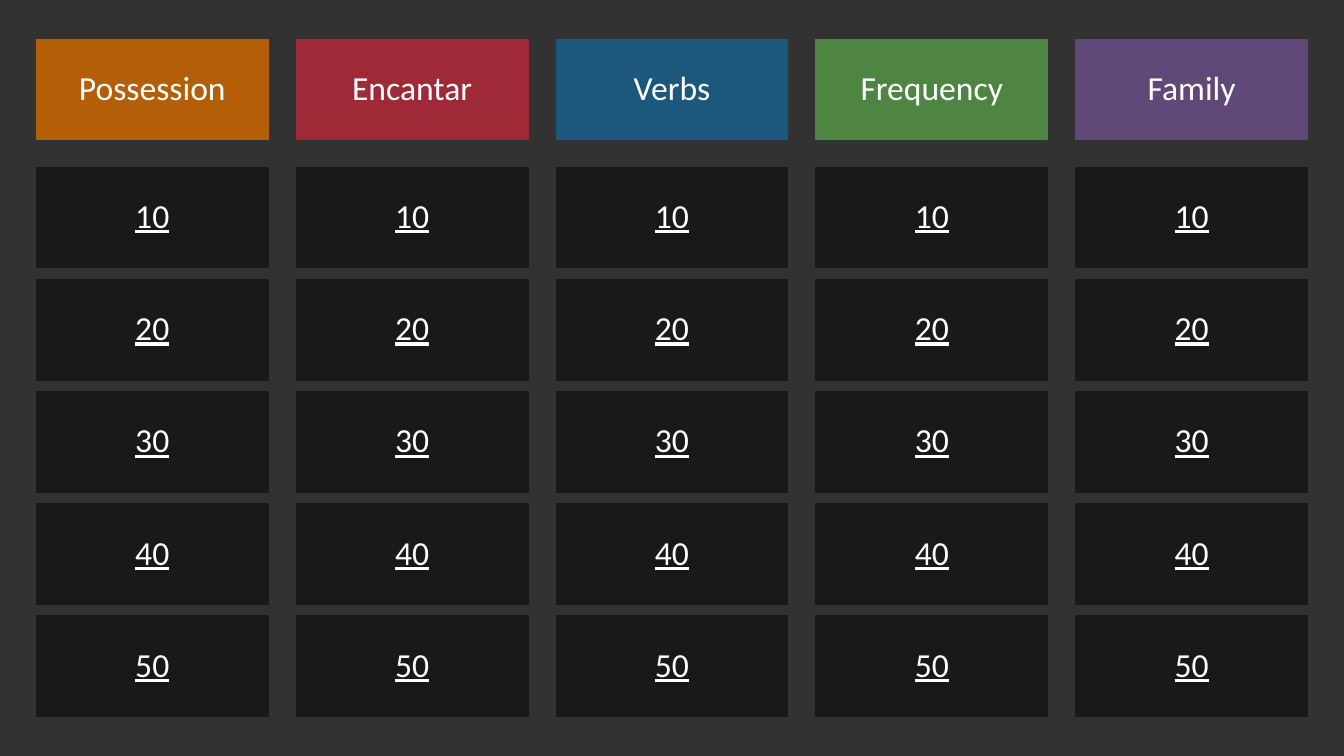
import pptx
import pptx.util
import pptx.dml.color
import pptx.enum.shapes
import pptx.enum.text

Pt = pptx.util.Pt
CATEGORIES = [
    ("Possession", "B45F07"),
    ("Encantar", "9F2936"),
    ("Verbs", "1B587C"),
    ("Frequency", "4E8542"),
    ("Family", "604878"),
]
VALUES = [10, 20, 30, 40, 50]
TILE_W, TILE_H = 165.6, 72


def paint(fmt, color):
    fmt.solid()
    fmt.fore_color.rgb = pptx.dml.color.RGBColor.from_string(color)


def add_tile(s, x, y, text, color, underline=False):
    sp = s.shapes.add_shape(
        pptx.enum.shapes.MSO_SHAPE.RECTANGLE, Pt(x), Pt(y), Pt(TILE_W), Pt(TILE_H))
    sp.shadow.inherit = False
    paint(sp.fill, color)
    paint(sp.line.fill, color)
    sp.line.width = Pt(0.75)
    tf = sp.text_frame
    tf.text = text
    tf.word_wrap = True
    tf.vertical_anchor = pptx.enum.text.MSO_ANCHOR.MIDDLE
    p = tf.paragraphs[0]
    p.alignment = pptx.enum.text.PP_ALIGN.CENTER
    p.line_spacing = 0.9
    r = p.runs[0]
    r.font.name = "Calibri"
    r.font.size = Pt(24)
    r.font.underline = underline
    paint(r.font.fill, "FFFFFF")


def add_column(s, x, y, height, name, color):
    add_tile(s, x, y, name, color)
    first = y + 91.4
    step = (y + height - TILE_H - first) / (len(VALUES) - 1)
    for i, value in enumerate(VALUES):
        add_tile(s, x, first + i * step, str(value), "191919", underline=True)


def add_board(s, x, y, width, height):
    step = (width - TILE_W) / (len(CATEGORIES) - 1)
    for i, (name, color) in enumerate(CATEGORIES):
        add_column(s, x + i * step, y, height, name, color)


def main():
    prs = pptx.Presentation()
    prs.slide_width, prs.slide_height = Pt(960), Pt(540)
    s = prs.slides.add_slide(prs.slide_layouts[6])
    paint(s.background.fill, "323232")
    add_board(s, 26, 28, 908, 484)
    prs.save("out.pptx")


if __name__ == "__main__":
    main()
